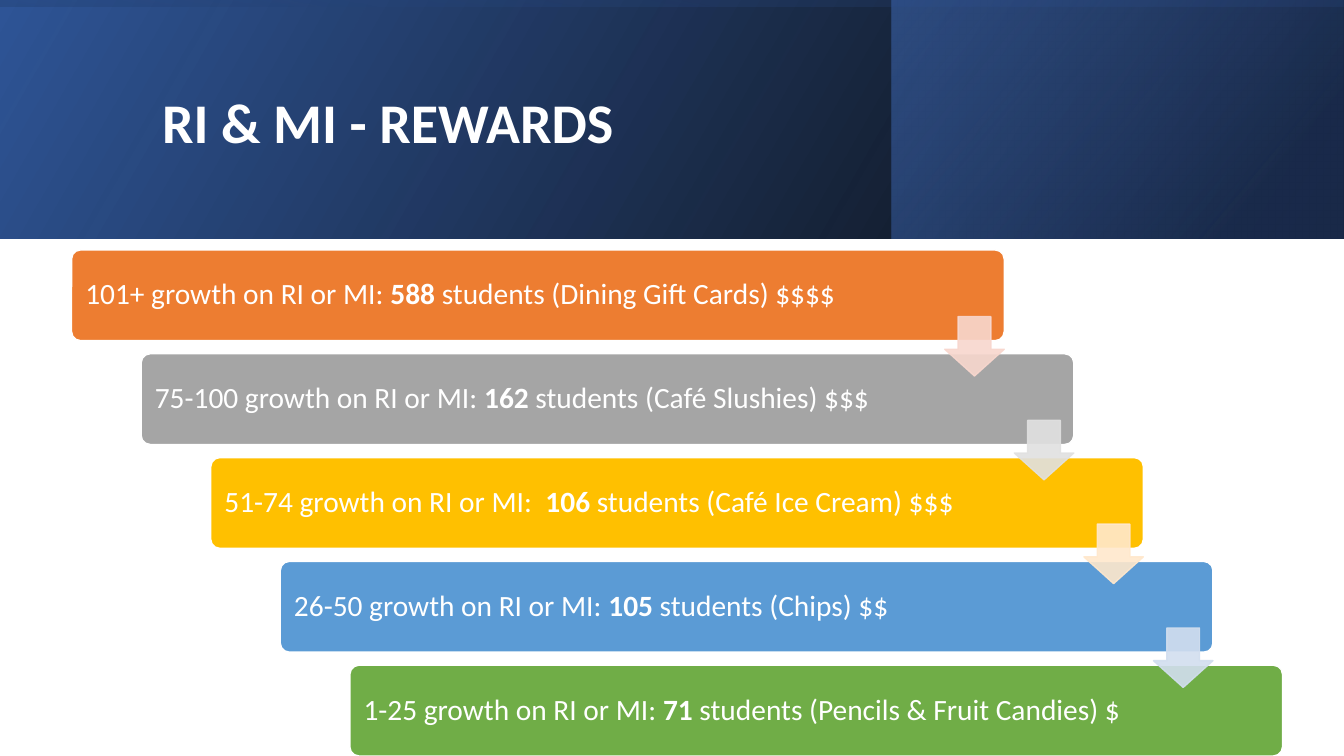
from lxml.etree import SubElement
from pptx import Presentation
from pptx.dml.color import RGBColor
from pptx.enum.shapes import MSO_SHAPE
from pptx.enum.text import MSO_ANCHOR, PP_ALIGN
from pptx.oxml.ns import qn
from pptx.util import Inches, Pt

REWARDS = [
    ("ED7D31", "101+ growth on RI or MI: ", "588", " students (Dining Gift Cards) $$$$"),
    ("A5A5A5", "75-100 growth on RI or MI: ", "162", " students (Café Slushies) $$$"),
    ("FFC000", "51-74 growth on RI or MI:\u00a0 ", "106", " students (Café Ice Cream) $$$"),
    ("5B9BD5", "26-50 growth on RI or MI: ", "105", " students (Chips) $$"),
    ("70AD47", "1-25 growth on RI or MI: ", "71", " students (Pencils & Fruit Candies) $"),
]
ARROW_COLORS = ["F8D7CE", "E1E1E1", "FFE8CC", "D2DEEF"]
STEP_X, STEP_Y = 0.69, 1.03


def rgb(color):
    return RGBColor.from_string(color)


def set_opacity(shape, percents):
    """Give the shape's colours, in document order, these opacities."""
    for color, percent in zip(shape._element.spPr.iter(qn("a:srgbClr")), percents):
        SubElement(color, qn("a:alpha"), val=str(percent * 1000))


def add_preset(slide, preset, left, top, width, height):
    shape = slide.shapes.add_shape(
        preset, Inches(left), Inches(top), Inches(width), Inches(height))
    shape.shadow.inherit = False
    return shape


def add_gradient_band(slide, box, stops, angle, rotation=0):
    """Mirrored rectangle; stops are (position, colour, opacity percent)."""
    band = add_preset(slide, MSO_SHAPE.RECTANGLE, *box)
    band.rotation = rotation
    band._element.spPr.xfrm.set("flipH", "1")
    band.line.fill.background()
    band.fill.gradient()
    band.fill.gradient_angle = angle
    for stop, (position, color, _) in zip(band.fill.gradient_stops, stops):
        stop.position = position
        stop.color.rgb = rgb(color)
    set_opacity(band, [opacity for _, _, opacity in stops])


def add_solid(slide, preset, box, color, line_color, adjustments):
    shape = add_preset(slide, preset, *box)
    shape.fill.solid()
    shape.fill.fore_color.rgb = rgb(color)
    shape.line.color.rgb = rgb(line_color)
    shape.line.width = Pt(1)
    for index, value in enumerate(adjustments):
        shape.adjustments[index] = value
    return shape


def write_text(shape, runs, size, color="FFFFFF", font="Calibri", inset=0.1):
    """Fill the shape with one left-aligned line of (text, bold) runs."""
    frame = shape.text_frame
    frame.word_wrap = True
    frame.vertical_anchor = MSO_ANCHOR.MIDDLE
    frame.margin_left = frame.margin_right = Inches(inset)
    paragraph = frame.paragraphs[0]
    paragraph.alignment = PP_ALIGN.LEFT
    paragraph.line_spacing = 0.9
    for text, bold in runs:
        run = paragraph.add_run()
        run.text = text
        run.font.name = font
        run.font.size = Pt(size)
        run.font.bold = bold
        run.font.color.rgb = rgb(color)


def add_header(slide):
    add_gradient_band(slide, (0, 0, 13.33, 2.37),
                      [(0, "000000", 96), (1, "2F5597", 100)], 30)
    add_gradient_band(slide, (8.84, 0, 4.48, 2.37),
                      [(0.19, "203864", 68), (1, "4472C4", 48)], 40)
    add_gradient_band(slide, (5.48, -5.48, 2.37, 13.33),
                      [(0.23, "2F5597", 16), (0.99, "000000", 45)], 10, rotation=270)
    title = slide.shapes.add_textbox(
        Inches(1.51), Inches(0.38), Inches(10.63), Inches(1.72))
    write_text(title, [("RI & MI - REWARDS", True)], 40)


def add_reward_steps(slide):
    for step, (color, growth, count, reward) in enumerate(REWARDS):
        box = (0.71 + STEP_X * step, 2.48 + STEP_Y * step, 9.25, 0.9)
        bar = add_solid(slide, MSO_SHAPE.ROUNDED_RECTANGLE, box, color, "FFFFFF", [0.1])
        write_text(bar, [(growth, False), (count, True), (reward, False)], 21, inset=0.11)
    for step, color in enumerate(ARROW_COLORS):
        box = (9.37 + STEP_X * step, 3.14 + STEP_Y * step, 0.59, 0.59)
        arrow = add_solid(slide, MSO_SHAPE.DOWN_ARROW, box, color, color, [0.55, 0.45])
        set_opacity(arrow, [90, 90])


def main():
    deck = Presentation()
    deck.slide_width, deck.slide_height = Inches(13.33), Inches(7.5)
    slide = deck.slides.add_slide(deck.slide_layouts[6])
    add_header(slide)
    add_reward_steps(slide)
    deck.save("out.pptx")


if __name__ == "__main__":
    main()
